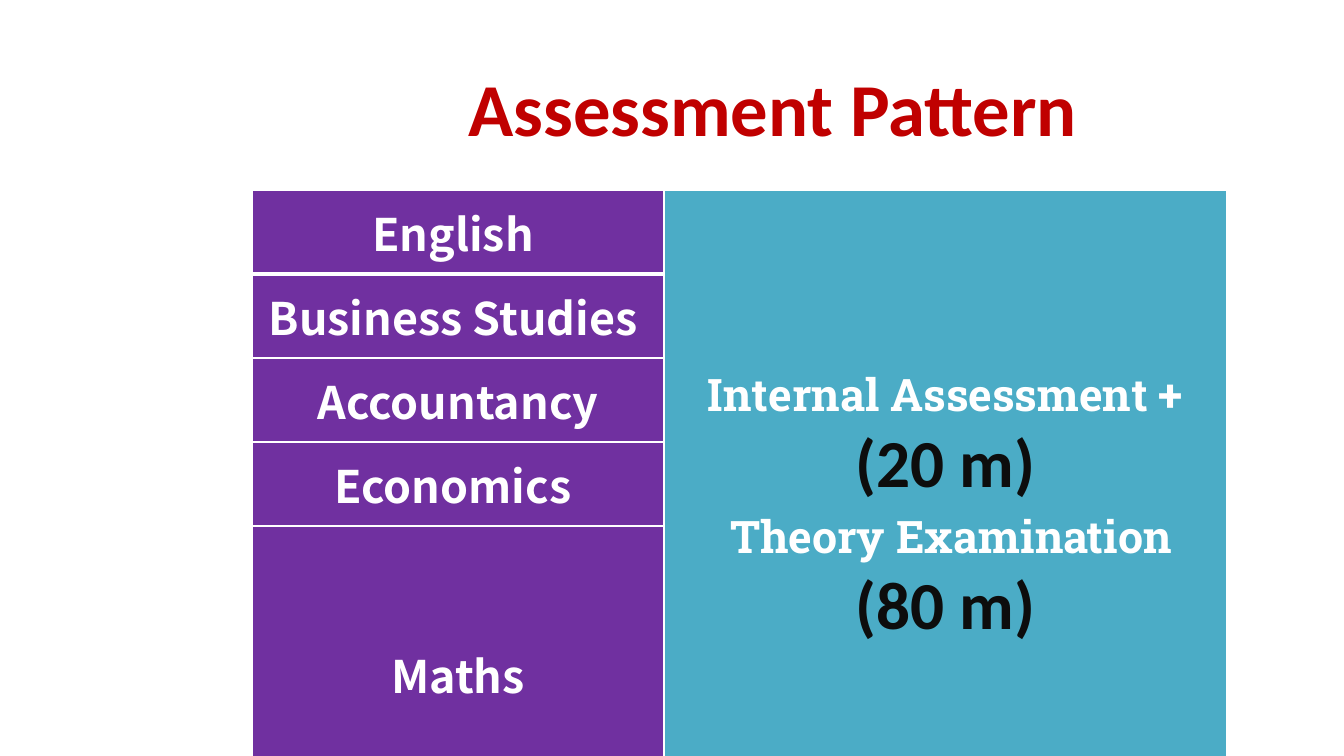
import pptx
import pptx.util
import pptx.oxml
import pptx.oxml.ns
import pptx.dml.color
import pptx.enum.text
from dataclasses import dataclass


@dataclass(frozen=True)
class Theme:
    red: str = "C00000"
    purple: str = "7030A0"
    teal: str = "4BACC6"
    white: str = "FFFFFF"
    ink: str = "0D0D0D"
    head: str = "Calibri"
    sans: str = "Noto Sans CJK KR"
    slab: str = "Roboto Slab"
    title: int = 40
    mark: int = 36
    body: int = 24


SCALE = 914400 / 134.4


def px(n):
    return pptx.util.Emu(round(n * SCALE))


def rgb(code):
    return pptx.dml.color.RGBColor.from_string(code)


class Page:
    def __init__(self, deck, theme):
        self.theme = theme
        self.slide = deck.slides.add_slide(deck.slide_layouts[5])

    def label(self, frame, lines):
        """Fill a frame with centred bold lines of (text, font, size, colour)."""
        for i, (text, name, size, color) in enumerate(lines):
            para = frame.add_paragraph() if i else frame.paragraphs[0]
            para.text = text
            para.alignment = pptx.enum.text.PP_ALIGN.CENTER
            font = para.font
            font.name, font.size, font.bold = name, pptx.util.Pt(size), True
            font.color.rgb = rgb(color)

    def title(self, text, left, top, width, height):
        box = self.slide.shapes.title
        box.left, box.top = px(left), px(top)
        box.width, box.height = px(width), px(height)
        box.text_frame.vertical_anchor = pptx.enum.text.MSO_ANCHOR.MIDDLE
        t = self.theme
        self.label(box.text_frame, [(text, t.head, t.title, t.red)])

    def border(self, cell, **edges):
        """Draw the cell's edges, given as L, R, T, B widths in points."""
        props = cell._tc.get_or_add_tcPr()
        for side, width in edges.items():
            props.append(pptx.oxml.parse_xml(
                f'<a:ln{side} {pptx.oxml.ns.nsdecls("a")} w="{pptx.util.Pt(width)}">'
                f'<a:solidFill><a:srgbClr val="{self.theme.white}"/></a:solidFill>'
                f'</a:ln{side}>'))

    def cell(self, cell, lines, fill, top=1, bottom=1):
        self.border(cell, L=1, R=1, T=top, B=bottom)
        cell.fill.solid()
        cell.fill.fore_color.rgb = rgb(fill)
        cell.vertical_anchor = pptx.enum.text.MSO_ANCHOR.MIDDLE
        self.label(cell.text_frame, lines)

    def table(self, left, top, widths, step, names, notes):
        """List names down the first column; notes span the second."""
        t, count = self.theme, len(names)
        grid = self.slide.shapes.add_table(
            count, 2, px(left), px(top), px(sum(widths)), px(step * count)).table
        grid.first_row = grid.horz_banding = False
        for col, width in zip(grid.columns, widths):
            col.width = px(width)
        grid.cell(0, 1).merge(grid.cell(count - 1, 1))
        self.cell(grid.cell(0, 1), notes, t.teal, bottom=3)
        for i, name in enumerate(names):
            self.cell(grid.cell(i, 0), [(name, t.sans, t.body, t.white)], t.purple,
                      top=3 if i == 1 else 1, bottom=3 if i == 0 else 1)


def main():
    deck = pptx.Presentation()
    deck.slide_width, deck.slide_height = px(1344), px(756)
    theme = Theme()
    page = Page(deck, theme)

    # Heading
    page.title("Assessment Pattern", 220, 42, 1106, 130)

    # Subjects beside the shared marking scheme
    part = (theme.slab, theme.body, theme.white)
    mark = (theme.head, theme.mark, theme.ink)
    page.table(
        252, 190, (412, 563), 84,
        ["English ", "Business Studies ", "Accountancy", "Economics ", "Maths"],
        [("Internal Assessment +", *part), ("(20 m)", *mark),
         (" Theory Examination", *part), ("(80 m)", *mark)])

    deck.save("out.pptx")


if __name__ == "__main__":
    main()
